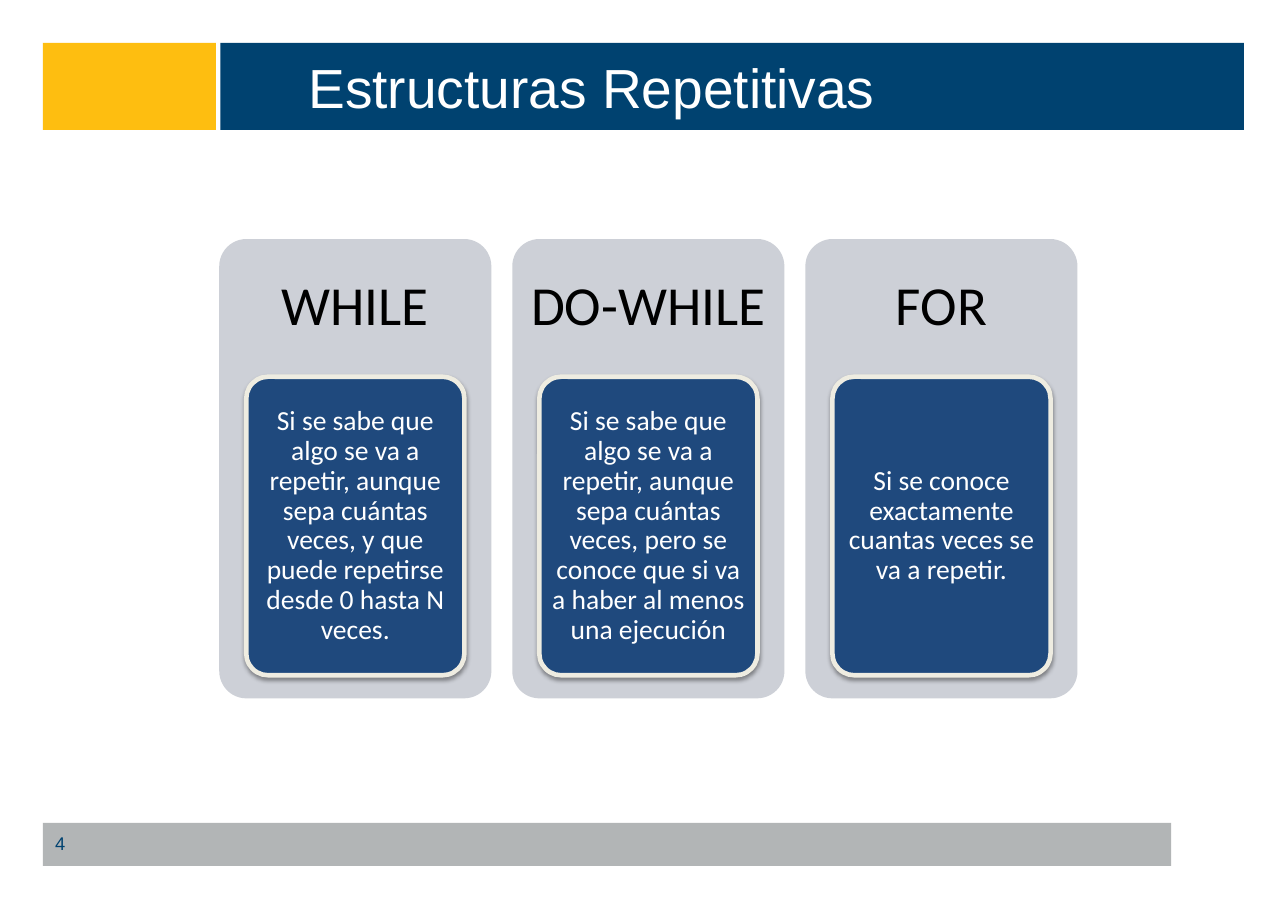
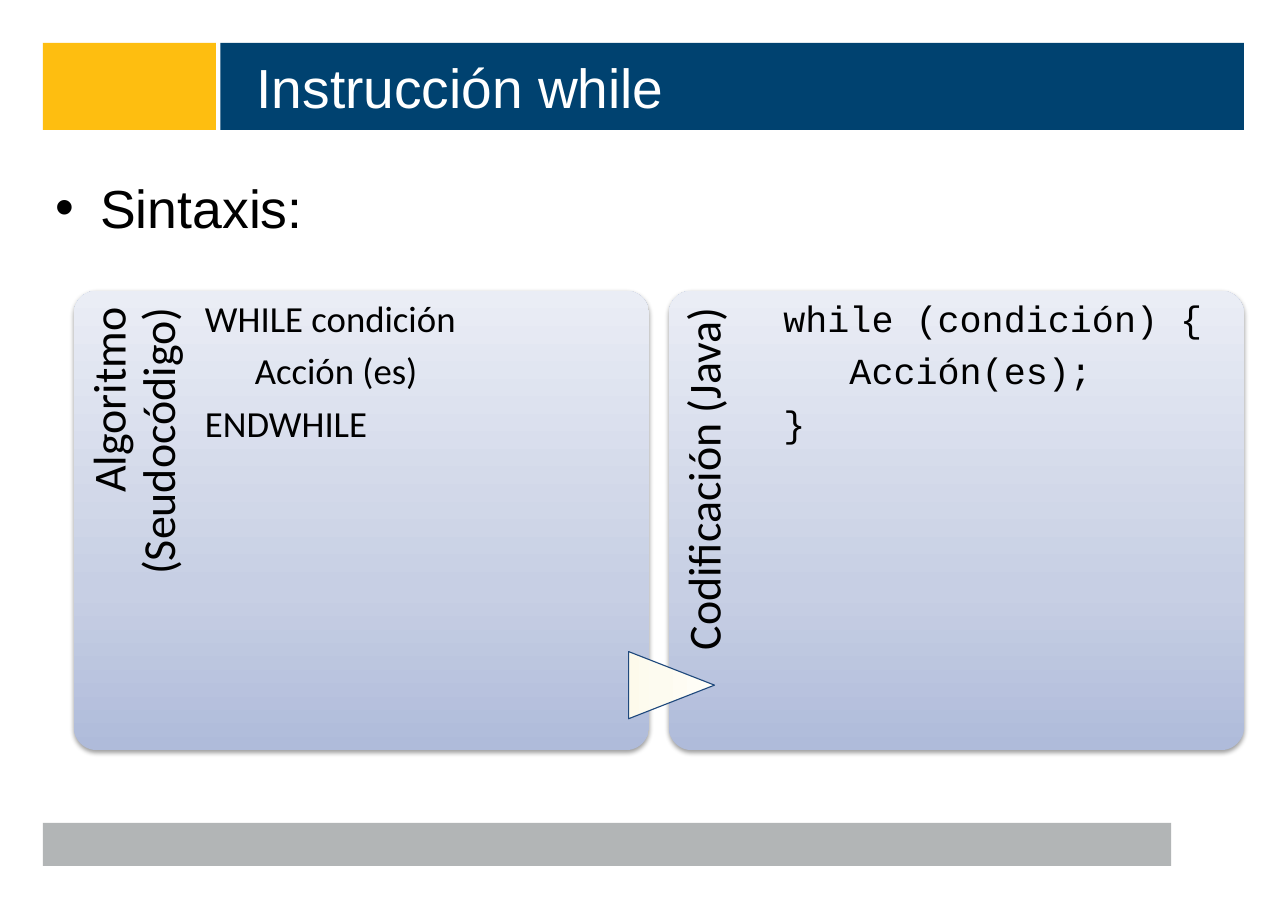
"""Build two slides on loop structures and the syntax of while."""
from dataclasses import dataclass

from lxml import etree
from pptx import Presentation
from pptx.dml.color import RGBColor
from pptx.enum import shapes as kinds, text as txt
from pptx.oxml.ns import qn
from pptx.shapes.autoshape import Shape
from pptx.slide import Slide
from pptx.util import Inches, Pt

YELLOW = RGBColor(0xFE, 0xBE, 0x10)
NAVY = RGBColor(0x00, 0x42, 0x70)
GREY = RGBColor(0xB2, 0xB5, 0xB6)
SILVER = RGBColor(0xCD, 0xD0, 0xD7)
BLUE = RGBColor(0x1F, 0x49, 0x7D)
CREAM = RGBColor(0xEE, 0xEC, 0xE1)
WHITE = RGBColor(0xFF, 0xFF, 0xFF)
BLACK = RGBColor(0x00, 0x00, 0x00)
PANEL_STOPS = ((0, RGBColor(0xAF, 0xBB, 0xDA)),
               (35, RGBColor(0xC7, 0xCF, 0xE4)),
               (100, RGBColor(0xEA, 0xED, 0xF5)))
ARROW_STOPS = ((0, RGBColor(0xFD, 0xFA, 0xEB)),
               (35, RGBColor(0xFD, 0xFB, 0xF0)),
               (100, RGBColor(0xFF, 0xFE, 0xF9)))

RECT = kinds.MSO_SHAPE.RECTANGLE
ROUNDED = kinds.MSO_SHAPE.ROUNDED_RECTANGLE
EXTRACT = kinds.MSO_SHAPE.FLOWCHART_EXTRACT
LEFT, CENTER, RIGHT = txt.PP_ALIGN.LEFT, txt.PP_ALIGN.CENTER, txt.PP_ALIGN.RIGHT
TOP, MIDDLE = txt.MSO_ANCHOR.TOP, txt.MSO_ANCHOR.MIDDLE

BAND_INSETS = (0.11, 0.05, 0.11, 0.05)


@dataclass(frozen=True)
class Box:
    """Place of an element in inches."""
    left: float
    top: float
    width: float
    height: float


@dataclass(frozen=True)
class TextStyle:
    """Look of a block of text."""
    size: float
    font: str
    color: RGBColor
    align: txt.PP_ALIGN = LEFT
    anchor: txt.MSO_ANCHOR = TOP
    insets: tuple[float, float, float, float] = BAND_INSETS
    tight: bool = False


@dataclass(frozen=True)
class LoopCard:
    """Name of a loop and when to use it."""
    name: str
    usage: str


@dataclass(frozen=True)
class SyntaxPanel:
    """Heading and code lines of a notation."""
    heading: str
    lines: tuple[str, ...]
    font: str


TITLE = TextStyle(36, "Arial", WHITE, anchor=MIDDLE)
PAGE_NUMBER = TextStyle(12, "Arial", NAVY, anchor=MIDDLE)
BULLET = TextStyle(35, "Arial", BLACK)
LOOP_NAME = TextStyle(36, "Calibri", BLACK, CENTER, MIDDLE, (0.15,) * 4, True)
LOOP_USAGE = TextStyle(18, "Calibri", WHITE, CENTER, MIDDLE,
                       (0.05, 0.04, 0.05, 0.04), True)
HEADING = TextStyle(30, "Calibri", BLACK, RIGHT, insets=(0, 0.11, 0.15, 0), tight=True)

BANDS = ((Box(0.39, 0.39, 1.57, 0.79), YELLOW),
         (Box(2, 0.39, 9.29, 0.79), NAVY),
         (Box(0.39, 7.47, 10.24, 0.39), GREY))

LOOPS = (
    LoopCard("WHILE", "Si se sabe que algo se va a repetir, aunque sepa cuántas "
             "veces, y que puede repetirse desde 0 hasta N veces."),
    LoopCard("DO-WHILE", "Si se sabe que algo se va a repetir, aunque sepa cuántas "
             "veces, pero se conoce que si va a haber al menos una ejecución"),
    LoopCard("FOR", "Si se conoce exactamente cuantas veces se va a repetir."),
)
NOTATIONS = (
    SyntaxPanel("Algoritmo (Seudocódigo)",
                ("  WHILE condición", "        Acción (es)", "  ENDWHILE"), "Calibri"),
    SyntaxPanel("Codificación (Java)",
                ("while (condición) {", "   Acción(es);", "}"), "Courier New"),
)


def lengths(box: Box) -> tuple[Inches, ...]:
    """Give the place of a box as lengths."""
    return tuple(Inches(v) for v in (box.left, box.top, box.width, box.height))


def write(shape: Shape, lines: tuple[str, ...], style: TextStyle) -> None:
    """Fill a shape with one paragraph per line."""
    frame = shape.text_frame
    frame.word_wrap = True
    frame.auto_size = txt.MSO_AUTO_SIZE.NONE
    frame.vertical_anchor = style.anchor
    (frame.margin_left, frame.margin_top,
     frame.margin_right, frame.margin_bottom) = map(Inches, style.insets)
    for index, line in enumerate(lines):
        paragraph = frame.add_paragraph() if index else frame.paragraphs[0]
        paragraph.alignment = style.align
        if style.tight:
            paragraph.line_spacing = 0.9
            paragraph.space_after = Pt(style.size * 0.35)
        run = paragraph.add_run()
        run.text = line
        run.font.size = Pt(style.size)
        run.font.name = style.font
        run.font.color.rgb = style.color


def add_text(slide: Slide, box: Box, style: TextStyle, *lines: str) -> Shape:
    """Add a text box."""
    textbox = slide.shapes.add_textbox(*lengths(box))
    write(textbox, lines, style)
    return textbox


def add_block(slide: Slide, kind: kinds.MSO_SHAPE, box: Box,
              fill: RGBColor | None = None, corner: float | None = None) -> Shape:
    """Add a shape with no outline or shadow."""
    block = slide.shapes.add_shape(kind, *lengths(box))
    block.shadow.inherit = False
    block.line.fill.background()
    if fill is not None:
        block.fill.solid()
        block.fill.fore_color.rgb = fill
    if corner is not None:
        block.adjustments[0] = corner
    return block


def shade(shape: Shape, stops: tuple[tuple[int, RGBColor], ...]) -> None:
    """Fill a shape with a gradient that runs upwards."""
    shape.fill.gradient()
    shape.fill.gradient_angle = 90
    stop_list = shape._element.spPr.find(".//" + qn("a:gsLst"))
    for stop in list(stop_list):
        stop_list.remove(stop)
    for percent, color in stops:
        stop = etree.SubElement(stop_list, qn("a:gs"), pos=str(percent * 1000))
        etree.SubElement(stop, qn("a:srgbClr"), val=str(color))


def cast_shadow(shape: Shape) -> None:
    """Give a shape a soft shadow below it."""
    effects = shape._element.spPr.find(qn("a:effectLst"))
    shadow = etree.SubElement(effects, qn("a:outerShdw"), blurRad=str(Pt(3.1)),
                              dist=str(Pt(1.6)), dir="5400000", rotWithShape="0")
    color = etree.SubElement(shadow, qn("a:srgbClr"), val=str(BLACK))
    etree.SubElement(color, qn("a:alpha"), val="38000")


def add_bullet(slide: Slide, box: Box, line: str) -> None:
    """Add a text box with one bulleted line."""
    textbox = slide.shapes.add_textbox(*lengths(box))
    properties = textbox.text_frame.paragraphs[0]._p.get_or_add_pPr()
    properties.set("marL", str(Inches(0.41)))
    properties.set("indent", str(Inches(-0.41)))
    etree.SubElement(properties, qn("a:buFont"), typeface="Arial")
    etree.SubElement(properties, qn("a:buChar"), char="•")
    write(textbox, (line,), BULLET)


def start_slide(deck: Presentation, title: str, title_left: float) -> Slide:
    """Add a slide with its bands and title."""
    slide = deck.slides.add_slide(deck.slide_layouts[6])
    for box, color in BANDS:
        add_block(slide, RECT, box, color)
    add_text(slide, Box(title_left, 0.39, 11.29 - title_left, 0.79), TITLE, title)
    return slide


def add_loop_card(slide: Slide, left: float, card: LoopCard) -> None:
    """Draw a loop's name above its usage."""
    width, usage_width = 2.47, 1.98
    add_block(slide, ROUNDED, Box(left, 2.17, width, 4.17), SILVER, 0.1)
    add_text(slide, Box(left, 2.17, width, 1.25), LOOP_NAME, card.name)
    usage_left = left + (width - usage_width) / 2
    usage = add_block(slide, ROUNDED, Box(usage_left, 3.42, usage_width, 2.71), BLUE, 0.1)
    usage.line.color.rgb = CREAM
    usage.line.width = Pt(3)
    cast_shadow(usage)
    write(usage, (card.usage,), LOOP_USAGE)


def add_syntax_panel(slide: Slide, left: float, panel: SyntaxPanel) -> None:
    """Draw code beside a heading turned on its side."""
    top, height = 2.64, 4.17
    back = add_block(slide, ROUNDED, Box(left, top, 5.22, height), corner=0.05)
    shade(back, PANEL_STOPS)
    cast_shadow(back)
    heading = add_text(slide, Box(left - 1.19, 3.83, 3.42, 1.04), HEADING, panel.heading)
    heading.rotation = 270
    code = TextStyle(24, panel.font, BLACK, insets=(0, 0.09, 0, 0), tight=True)
    add_text(slide, Box(left + 1.04, top, 3.89, height), code, *panel.lines)


def build_loops(deck: Presentation) -> None:
    """Build the slide that compares the loops."""
    slide = start_slide(deck, "Estructuras Repetitivas", 2.69)
    add_text(slide, Box(0.39, 7.46, 2.73, 0.39), PAGE_NUMBER, "4")
    for index, card in enumerate(LOOPS):
        add_loop_card(slide, 1.99 + index * 2.66, card)


def build_while(deck: Presentation) -> None:
    """Build the slide on the syntax of while."""
    slide = start_slide(deck, "Instrucción while", 2.22)
    add_bullet(slide, Box(0.39, 1.54, 10.9, 0.8), "Sintaxis:")
    for index, panel in enumerate(NOTATIONS):
        add_syntax_panel(slide, 0.67 + index * 5.4, panel)
    arrow = add_block(slide, EXTRACT, Box(5.79, 5.83, 0.61, 0.78))
    arrow.rotation = 90
    shade(arrow, ARROW_STOPS)
    arrow.line.color.rgb = BLUE
    arrow.line.width = Pt(0.75)


def main() -> None:
    """Build and save the deck."""
    deck = Presentation()
    deck.slide_width, deck.slide_height = Inches(11.69), Inches(8.27)
    build_loops(deck)
    build_while(deck)
    deck.save("out.pptx")


if __name__ == "__main__":
    main()
